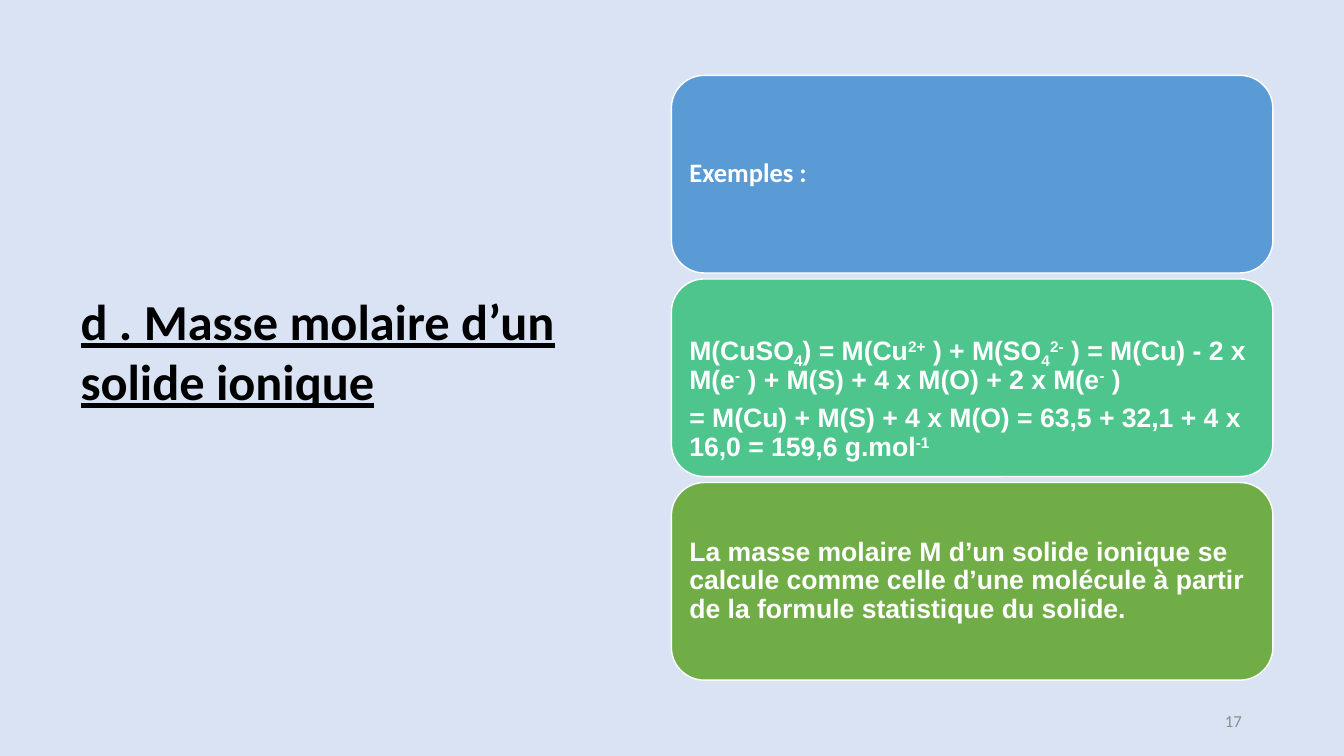
from pptx import Presentation
from pptx.dml.color import RGBColor as Rgb
from pptx.enum.shapes import MSO_SHAPE as Form
from pptx.enum.text import MSO_ANCHOR as Anchor, PP_ALIGN as Align
from pptx.util import Cm, Pt

hues = {
    "back": "DAE3F3", "blue": "5B9BD5", "mint": "4DC58D", "green": "70AD47",
    "white": "FFFFFF", "black": "000000", "gray": "8C8C8C",
}


def tint(name):
    return Rgb.from_string(hues[name])


def write(para, text, size, face, hue, bold=False, base=0):
    run = para.add_run()
    run.text = text
    font = run.font
    font.size, font.name, font.bold = Pt(size), face, bold
    font.color.rgb = tint(hue)
    if base:
        run._r.get_or_add_rPr().set("baseline", str(base * 1000))
    return run


deck = Presentation()
deck.slide_width, deck.slide_height = Cm(33.87), Cm(19.05)
slide = deck.slides.add_slide(deck.slide_layouts[6])
slide.background.fill.solid()
slide.background.fill.fore_color.rgb = tint("back")

title = slide.shapes.add_textbox(Cm(1.78), Cm(1.78), Cm(13.34), Cm(15.47)).text_frame
title.word_wrap = True
title.vertical_anchor = Anchor.MIDDLE
title.margin_bottom = Cm(1.5)
head = write(title.paragraphs[0], "d . Masse molaire d’un solide ionique",
             36, "Calibri", "black", True)
head.font.underline = True

sub, sup = -25, 30
sum_line = [
    ("M(CuSO", 0), ("4", sub), (") = M(Cu", 0), ("2+", sup), (" ) + M(SO", 0),
    ("4", sub), ("2-", sup), (" ) = M(Cu) - 2 x M(e", 0), ("-", sup),
    (" ) + M(S) + 4 x M(O) + 2 x M(e", 0), ("-", sup), (" )", 0),
]
mass_line = [
    ("= M(Cu) + M(S) + 4 x M(O) = 63,5 + 32,1 + 4 x 16,0 = 159,6 g.mol", 0),
    ("-1", sup),
]
rule_line = [
    ("La masse molaire M d’un solide ionique se calcule comme celle d’une "
     "molécule à partir de la formule statistique du solide.", 0),
]
cards = [
    ("blue", "Calibri", 0.44, [[("Exemples :", 0)]]),
    ("mint", "Arial", 1.46, [sum_line, mass_line]),
    ("green", "Arial", 0.44, [rule_line]),
]
for i, (hue, face, top, lines) in enumerate(cards):
    card = slide.shapes.add_shape(
        Form.ROUNDED_RECTANGLE, Cm(16.92), Cm(1.9 + 5.13 * i), Cm(15.16), Cm(4.98))
    card.shadow.inherit = False
    card.fill.solid()
    card.fill.fore_color.rgb = tint(hue)
    card.line.color.rgb = tint("white")
    card.line.width = Pt(1)
    frame = card.text_frame
    frame.word_wrap = True
    frame.vertical_anchor = Anchor.MIDDLE
    frame.margin_left = frame.margin_right = Cm(0.21)
    frame.margin_top, frame.margin_bottom = Cm(top), Cm(0.44)
    for j, line in enumerate(lines):
        para = frame.add_paragraph() if j else frame.paragraphs[0]
        para.alignment = Align.LEFT
        para.line_spacing = 0.9
        para.space_after = Pt(6.65)
        for text, base in line:
            write(para, text, 19, face, "white", True, base)

page = slide.shapes.add_textbox(Cm(23.93), Cm(17.65), Cm(7.62), Cm(1.02)).text_frame
page.word_wrap = True
page.vertical_anchor = Anchor.MIDDLE
page.paragraphs[0].alignment = Align.RIGHT
write(page.paragraphs[0], "17", 12, "Calibri", "gray")

deck.save("out.pptx")
